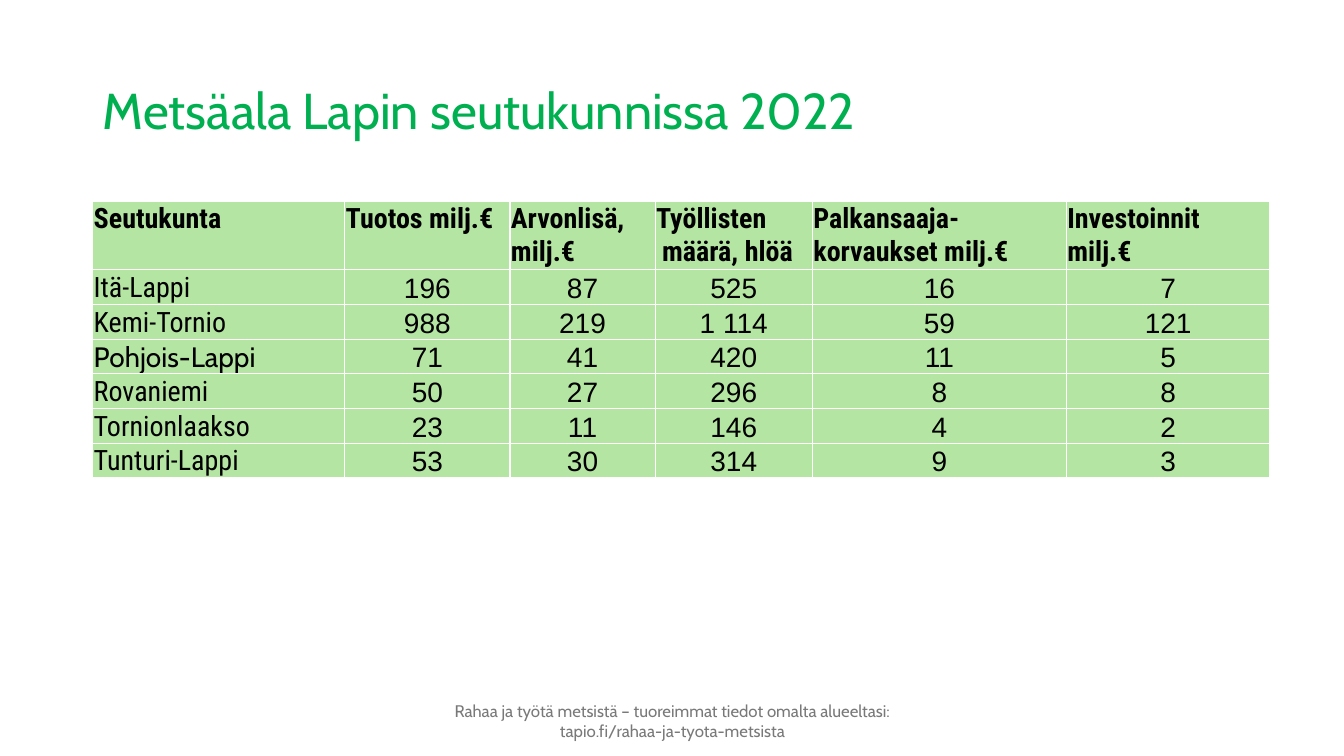
"""Build the slide on the forest sector in the sub-regions of Lapland."""
from dataclasses import dataclass

from lxml import etree
from pptx import Presentation, util as u
from pptx.dml.color import RGBColor
from pptx.enum import text
from pptx.oxml import ns


@dataclass(frozen=True)
class Theme:
    green: str = "00B050"
    pale: str = "B4E5A2"
    grey: str = "797979"
    black: str = "000000"
    white: str = "FFFFFF"
    head: str = "Cabin"
    label: str = "Roboto Condensed"
    digit: str = "Arial"
    large: int = 36
    mid: int = 20
    small: int = 12


@dataclass(frozen=True)
class Box:
    left: float
    top: float
    width: float
    height: float


@dataclass(frozen=True)
class Region:
    name: str
    values: tuple[str, ...]
    face: str = Theme.label


@dataclass(frozen=True)
class Column:
    lines: tuple[str, ...]
    width: float
    indent: float = 0


THEME = Theme()
WIDE, HIGH = u.Inches(13.33), u.Inches(7.5)
TITLE = Box(6.9, 5.33, 86.27, 19.33)
TABLE = Box(6.9, 26.67, 87.6, 36.27)
FOOTER = Box(31.96, 92.67, 36.16, 5.33)
HEAD_ROW, BODY_ROW = 7.6, 2.67
THIN = u.Inches(0.01)

COLUMNS = (
    Column(("Seutukunta",), 18.75),
    Column(("Tuotos milj.€",), 12.3),
    Column(("Arvonlisä, milj.€",), 10.8),
    Column(("Työllisten", "määrä, hlöä"), 11.7, 0.06),
    Column(("Palkansaaja-korvaukset milj.€",), 18.9),
    Column(("Investoinnit", "milj.€"), 15.15),
)
REGIONS = (
    Region("Itä-Lappi", ("196", "87", "525", "16", "7")),
    Region("Kemi-Tornio", ("988", "219", "1 114", "59", "121")),
    Region("Pohjois-Lappi", ("71", "41", "420", "11", "5"), THEME.head),
    Region("Rovaniemi", ("50", "27", "296", "8", "8")),
    Region("Tornionlaakso", ("23", "11", "146", "4", "2")),
    Region("Tunturi-Lappi", ("53", "30", "314", "9", "3")),
)


def across(share: float) -> int:
    return u.Emu(round(WIDE * share / 100))


def down(share: float) -> int:
    return u.Emu(round(HIGH * share / 100))


def place(box: Box) -> tuple[int, int, int, int]:
    return across(box.left), down(box.top), across(box.width), down(box.height)


def style(para, face: str, size: int, color: str, align, bold: bool = False) -> None:
    para.alignment = align
    font = para.font
    font.name, font.size, font.bold = face, u.Pt(size), bold
    font.color.rgb = RGBColor.from_string(color)


def edge(cell) -> None:
    props = cell._tc.get_or_add_tcPr()
    for side in ("lnL", "lnR", "lnT", "lnB"):
        line = etree.SubElement(props, ns.qn(f"a:{side}"), w=str(u.Pt(1)))
        fill = etree.SubElement(line, ns.qn("a:solidFill"))
        etree.SubElement(fill, ns.qn("a:srgbClr"), val=THEME.white)


def write(cell, lines: tuple[str, ...], face: str, align, inset: int,
          anchor, bold: bool = False) -> None:
    edge(cell)
    cell.fill.solid()
    cell.fill.fore_color.rgb = RGBColor.from_string(THEME.pale)
    cell.margin_left = cell.margin_top = cell.margin_right = inset
    cell.margin_bottom = 0
    cell.vertical_anchor = anchor
    cell.text_frame.text = "\n".join(lines)
    for para in cell.text_frame.paragraphs:
        style(para, face, THEME.mid, THEME.black, align, bold)


def add_title(slide) -> None:
    title = slide.shapes.title
    title.left, title.top, title.width, title.height = place(TITLE)
    frame = title.text_frame
    frame.text = "Metsäala Lapin seutukunnissa 2022"
    frame.vertical_anchor = text.MSO_ANCHOR.MIDDLE
    para = frame.paragraphs[0]
    para.line_spacing = 0.9
    style(para, THEME.head, THEME.large, THEME.green, text.PP_ALIGN.LEFT)


def add_footer(slide) -> None:
    frame = slide.shapes.add_textbox(*place(FOOTER)).text_frame
    frame.word_wrap = True
    frame.vertical_anchor = text.MSO_ANCHOR.MIDDLE
    frame.text = ("Rahaa ja työtä metsistä – tuoreimmat tiedot omalta alueeltasi: "
                  "tapio.fi/rahaa-ja-tyota-metsista")
    style(frame.paragraphs[0], THEME.head, THEME.small, THEME.grey, text.PP_ALIGN.CENTER)


def add_grid(slide) -> None:
    holder = slide.shapes.add_table(len(REGIONS) + 1, len(COLUMNS), *place(TABLE))
    grid = holder.table
    left, center = text.PP_ALIGN.LEFT, text.PP_ALIGN.CENTER
    top, base = text.MSO_ANCHOR.TOP, text.MSO_ANCHOR.BOTTOM
    for row in grid.rows:
        row.height = down(BODY_ROW)
    grid.rows[0].height = down(HEAD_ROW)
    for index, column in enumerate(COLUMNS):
        grid.columns[index].width = across(column.width)
        cell = grid.cell(0, index)
        write(cell, column.lines, THEME.label, left, THIN, top, True)
        if column.indent:
            props = cell.text_frame.paragraphs[-1]._p.get_or_add_pPr()
            props.set("marL", str(u.Inches(column.indent)))
    for index, region in enumerate(REGIONS, 1):
        write(grid.cell(index, 0), (region.name,), region.face, left, THIN, base)
        for place_no, value in enumerate(region.values, 1):
            write(grid.cell(index, place_no), (value,), THEME.digit, center, 0, base)
    holder.height = down(TABLE.height)


def main() -> None:
    deck = Presentation()
    deck.slide_width, deck.slide_height = WIDE, HIGH
    slide = deck.slides.add_slide(deck.slide_layouts[5])
    add_title(slide)
    add_footer(slide)
    add_grid(slide)
    deck.save("out.pptx")


if __name__ == "__main__":
    main()
